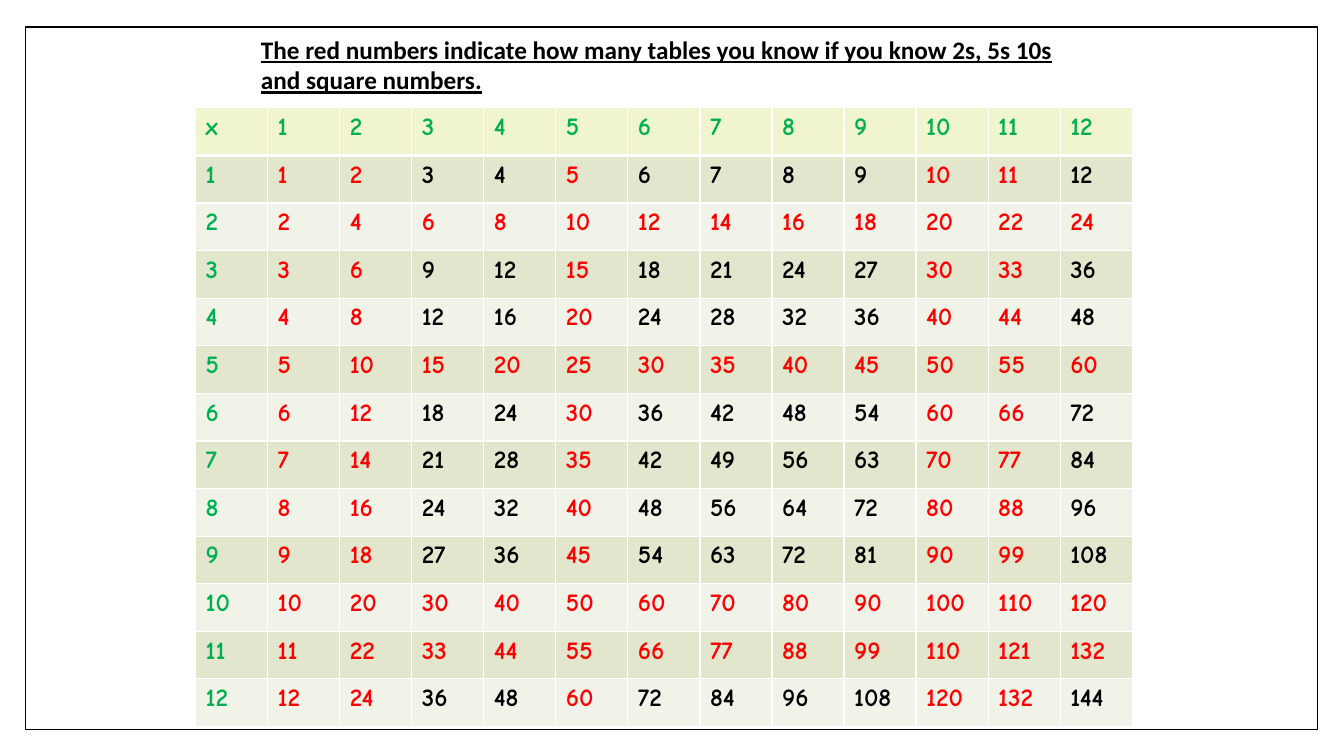
from lxml.etree import SubElement
from pptx import Presentation
from pptx.dml.color import RGBColor
from pptx.enum.shapes import MSO_SHAPE
from pptx.enum.text import MSO_AUTO_SIZE
from pptx.oxml.ns import qn
from pptx.util import Inches, Pt

COLORS = {
    "white": "FFFFFF",
    "black": "000000",
    "red": "FF0000",
    "green": "00B050",
    "head": "F0F5D0",
    "odd": "E1E6CD",
    "even": "F1F3E8",
}
TITLE = ("The red numbers indicate how many tables you know "
         "if you know 2s, 5s 10s and square numbers.")
SIZE = 13
RED_ROWS = {2, 5, 10, 11}
RED_COLS = RED_ROWS | {1}


def color(name):
    return RGBColor.from_string(COLORS[name])


def add_run(frame, text, font, tint):
    run = frame.paragraphs[0].add_run()
    run.text = text
    run.font.name = font
    run.font.size = Pt(18)
    run.font.bold = True
    run.font.color.rgb = color(tint)
    return run


def add_frame(slide):
    box = slide.shapes.add_shape(
        MSO_SHAPE.RECTANGLE, Inches(0.25), Inches(0.27), Inches(12.82), Inches(6.97))
    box.shadow.inherit = False
    box.fill.solid()
    box.fill.fore_color.rgb = color("white")
    box.line.color.rgb = color("black")
    box.line.width = Pt(1)


def add_title(slide):
    box = slide.shapes.add_textbox(
        Inches(2.49), Inches(0.29), Inches(8.19), Inches(0.71))
    box.text_frame.word_wrap = True
    box.text_frame.auto_size = MSO_AUTO_SIZE.SHAPE_TO_FIT_TEXT
    add_run(box.text_frame, TITLE, "Calibri", "black").font.underline = True


def add_edges(cell, base):
    props = cell._tc.get_or_add_tcPr()
    for side, width in (("L", 1), ("R", 1), ("T", 1), ("B", base)):
        edge = SubElement(props, qn(f"a:ln{side}"), w=str(Pt(width)))
        fill = SubElement(edge, qn("a:solidFill"))
        SubElement(fill, qn("a:srgbClr"), val=COLORS["white"])


def label(row, col):
    if row and col:
        return str(row * col)
    return str(row or col or "x")


def tint(row, col):
    if not row or not col:
        return "green"
    return "red" if row in RED_ROWS or col in RED_COLS else "black"


def shade(row):
    if not row:
        return "head"
    return "odd" if row % 2 else "even"


def add_grid(slide):
    wide, high = Inches(9.29), Inches(6.14)
    table = slide.shapes.add_table(
        SIZE, SIZE, Inches(1.94), Inches(1.07), wide, high).table
    for col in table.columns:
        col.width = wide // SIZE
    for row in table.rows:
        row.height = high // SIZE
    for row in range(SIZE):
        for col in range(SIZE):
            cell = table.cell(row, col)
            add_edges(cell, 1 if row else 3)
            cell.fill.solid()
            cell.fill.fore_color.rgb = color(shade(row))
            add_run(cell.text_frame, label(row, col), "Comic Neue", tint(row, col))


def main():
    deck = Presentation()
    deck.slide_width, deck.slide_height = Inches(13.33), Inches(7.5)
    slide = deck.slides.add_slide(deck.slide_layouts[6])
    # Page border
    add_frame(slide)
    # Times table
    add_grid(slide)
    # Heading
    add_title(slide)
    deck.save("out.pptx")


if __name__ == "__main__":
    main()
